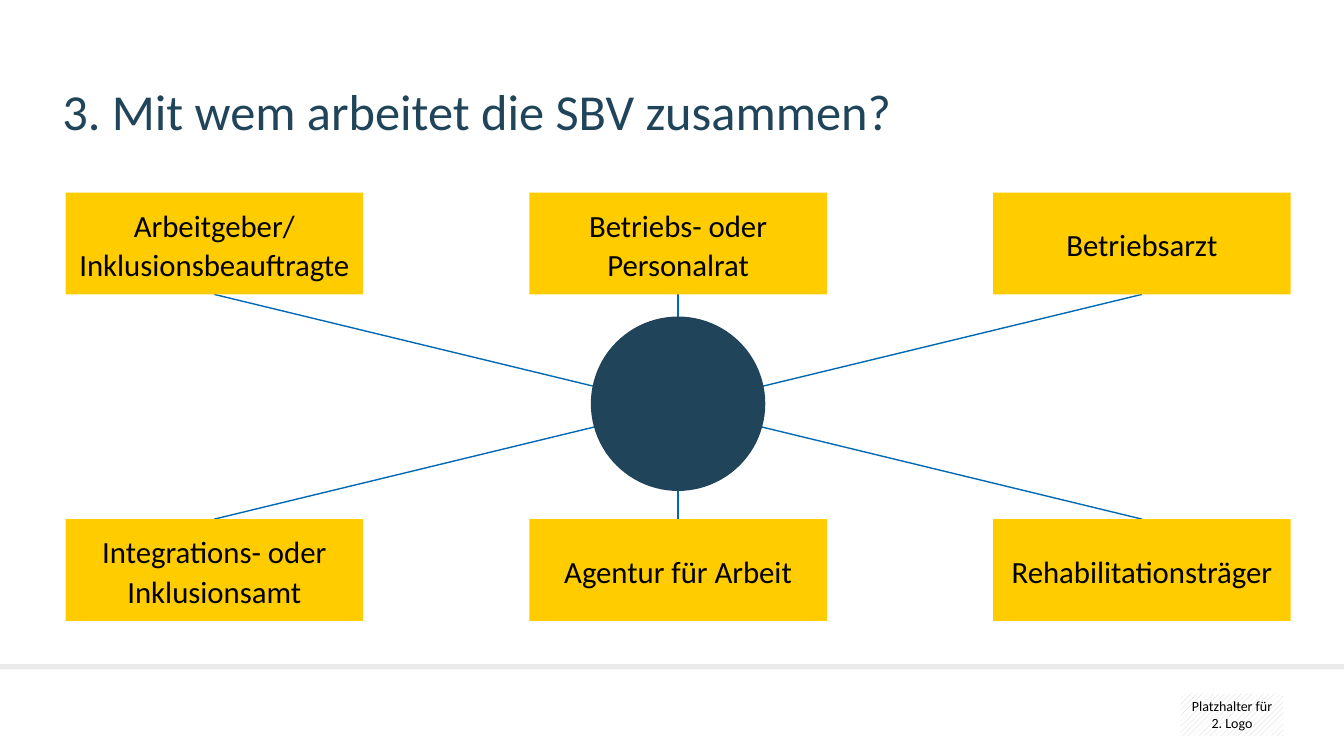
import pptx
import pptx.util
import pptx.dml.color
import pptx.enum.dml
import pptx.enum.shapes
import pptx.enum.text
import pptx.oxml.ns
import lxml.etree

SHAPES = pptx.enum.shapes.MSO_SHAPE
ALIGN = pptx.enum.text.PP_ALIGN
ANCHOR = pptx.enum.text.MSO_ANCHOR


def colour(hex_string):
    return pptx.dml.color.RGBColor.from_string(hex_string)


class Page:
    """Current slide and its style; lengths are percent of the slide's size."""

    FONT = "Calibri"
    NAVY, BLUE, YELLOW = "20445A", "0069B3", "FFCC00"
    BLACK, WHITE, PALE, GREY = "000000", "FFFFFF", "EBEBEB", "D3D3D3"

    def __init__(self, deck):
        self.deck = deck
        self.shapes = deck.slides.add_slide(deck.slide_layouts[6]).shapes

    def place(self, left, top):
        return (round(self.deck.slide_width * left / 100),
                round(self.deck.slide_height * top / 100))

    def shape(self, kind, left, top, width, height, fill):
        shape = self.shapes.add_shape(
            kind, *self.place(left, top), *self.place(width, height))
        shape.shadow.inherit = False
        shape.fill.solid()
        shape.fill.fore_color.rgb = colour(fill)
        shape.line.fill.background()
        return shape

    def hatch(self, shape):
        shape.fill.patterned()
        shape.fill.pattern = pptx.enum.dml.MSO_PATTERN.WIDE_UPWARD_DIAGONAL
        shape.fill.fore_color.rgb = colour(self.GREY)
        shape.fill.back_color.rgb = colour(self.WHITE)

    def label(self, box, text, size, ink=BLACK, align=ALIGN.CENTER,
              anchor=ANCHOR.MIDDLE, spacing=None):
        frame = box.text_frame
        frame.text = text
        frame.word_wrap = True
        frame.vertical_anchor = anchor
        para = frame.paragraphs[0]
        para.alignment = align
        para.line_spacing = spacing
        for span in para.runs:
            span.font.name = self.FONT
            span.font.size = pptx.util.Pt(size)
            span.font.color.rgb = colour(ink)

    def title(self, left, top, width, height, text):
        box = self.shapes.add_textbox(
            *self.place(left, top), *self.place(width, height))
        self.label(box, text, 36, self.NAVY, ALIGN.LEFT, ANCHOR.BOTTOM, 0.9)

    def line(self, start, end):
        line = self.shapes.add_connector(
            pptx.enum.shapes.MSO_CONNECTOR.STRAIGHT,
            *self.place(*start), *self.place(*end))
        line.line.color.rgb = colour(self.BLUE)
        line.line.width = pptx.util.Pt(1)
        lxml.etree.SubElement(line._element.spPr,
                              pptx.oxml.ns.qn("a:effectLst"))


PARTNERS = [
    ["Arbeitgeber/ Inklusionsbeauftragte", "Betriebs- oder Personalrat",
     "Betriebsarzt"],
    ["Integrations- oder Inklusionsamt", "Agentur für Arbeit",
     "Rehabilitationsträger"],
]
BOX_LEFT, BOX_TOP = 4.88, 25.47
BOX_WIDTH, BOX_HEIGHT = 22.13, 13.47
COLUMN_STEP, ROW_STEP = 34.51, 43.2
HUB = (BOX_LEFT + COLUMN_STEP + BOX_WIDTH / 2, 53.8)


def main():
    deck = pptx.Presentation()
    deck.slide_width = pptx.util.Inches(13.33)
    deck.slide_height = pptx.util.Inches(7.5)
    page = Page(deck)

    # Footer: rule and logo placeholder
    page.shape(SHAPES.RECTANGLE, 0, 87.87, 100, 0.67, page.PALE)
    logo = page.shape(SHAPES.RECTANGLE, 87.85, 91.73, 7.65, 5.6, page.WHITE)
    page.hatch(logo)
    page.label(logo, "Platzhalter für 2. Logo", 10)

    page.title(3.9, 10.67, 71.34, 8.67, "3. Mit wem arbeitet die SBV zusammen?")

    # Partners, each joined to the hub from its inner edge
    for row, names in enumerate(PARTNERS):
        for column, name in enumerate(names):
            left = BOX_LEFT + column * COLUMN_STEP
            top = BOX_TOP + row * ROW_STEP
            inner_edge = top if row else top + BOX_HEIGHT
            page.line((left + BOX_WIDTH / 2, inner_edge), HUB)
            box = page.shape(SHAPES.RECTANGLE, left, top,
                             BOX_WIDTH, BOX_HEIGHT, page.YELLOW)
            page.label(box, name, 22, spacing=pptx.util.Pt(28))

    # Hub covers the line ends
    page.shape(SHAPES.OVAL, 43.96, 41.87, 12.98, 23.07, page.NAVY)

    deck.save("out.pptx")


if __name__ == "__main__":
    main()
